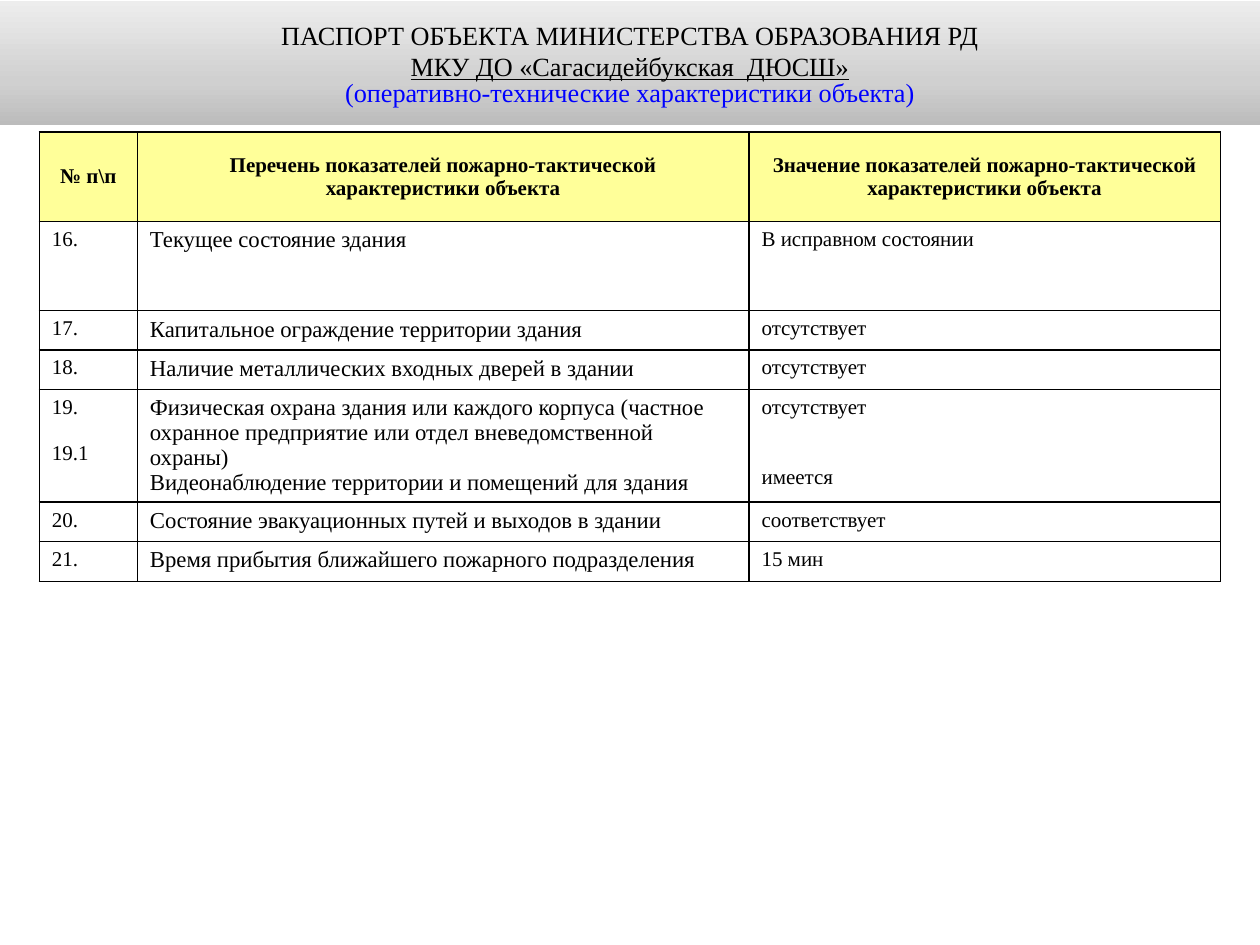
"""Build a slide with a table of fire-safety characteristics of a building."""
from copy import deepcopy

from lxml.etree import SubElement
from pptx import Presentation
from pptx.dml.color import RGBColor
from pptx.enum.text import MSO_ANCHOR as Anchor, MSO_AUTO_SIZE as AutoSize, PP_ALIGN as Align
from pptx.oxml.ns import qn
from pptx.util import Pt

COLORS = {
    "black": "000000", "white": "FFFFFF", "blue": "0000FF", "header": "FFFF99",
    "dark": "BCBCBC", "mid": "D0D0D0", "light": "EDEDED",
}
FONT = "Times New Roman"
TITLE = [
    "ПАСПОРТ ОБЪЕКТА МИНИСТЕРСТВА ОБРАЗОВАНИЯ РД",
    "МКУ ДО «Сагасидейбукская  ДЮСШ»",
    "(оперативно-технические характеристики объекта)",
]
HEADER = [
    "№ п\\п",
    "Перечень показателей пожарно-тактической характеристики объекта",
    "Значение показателей пожарно-тактической характеристики объекта",
]
ROWS = [
    ["16.", "Текущее состояние здания", "В исправном состоянии"],
    ["17.", "Капитальное ограждение территории здания", "отсутствует"],
    ["18.", "Наличие металлических входных дверей в здании", "отсутствует"],
    ["19.\n19.1",
     "Физическая охрана здания или каждого корпуса (частное охранное предприятие "
     "или отдел вневедомственной охраны)\n"
     "Видеонаблюдение территории и помещений для здания",
     "отсутствует\nимеется"],
    ["20.", "Состояние эвакуационных путей и выходов в здании", "соответствует"],
    ["21.", "Время прибытия ближайшего пожарного подразделения", "15 мин"],
]
COL_WIDTHS = [56, 349.5, 269.5]
ROW_HEIGHTS = [51, 51, 22.5, 22.5, 64.5, 22.5, 23]
BODY_SIZES = [12, 13, 12]
SECOND_LINE_GAPS = [13.3, 0, 26.7]


def rgb(name):
    return RGBColor.from_string(COLORS[name])


def format_runs(p, size, color="black", bold=False, underline=False):
    for r in p.runs:
        r.font.name = FONT
        r.font.size = Pt(size)
        r.font.bold = bold
        r.font.underline = underline
        r.font.color.rgb = rgb(color)


def fill_gradient(sp, stops, angle):
    sp.fill.gradient()
    sp.fill.gradient_angle = angle
    gs_list = sp._element.spPr.find(qn("a:gradFill")).find(qn("a:gsLst"))
    while len(gs_list) < len(stops):
        gs_list.append(deepcopy(gs_list[0]))
    for stop, (position, color) in zip(sp.fill.gradient_stops, stops):
        stop.position = position
        stop.color.rgb = rgb(color)


def add_title(s):
    sp = s.shapes.title
    sp.left, sp.top, sp.width, sp.height = Pt(0), Pt(0.5), Pt(720), Pt(71)
    fill_gradient(sp, [(0, "dark"), (0.35, "mid"), (1, "light")], 90)
    tf = sp.text_frame
    tf.text = "\n".join(TITLE)
    tf.word_wrap = True
    tf.auto_size = AutoSize.NONE
    tf.vertical_anchor = Anchor.MIDDLE
    for p, color, underline in zip(tf.paragraphs, ["black", "black", "blue"],
                                   [False, True, False]):
        p.alignment = Align.CENTER
        format_runs(p, 15, color, underline=underline)
    tf.paragraphs[-1].line_spacing = 0.8


def add_borders(cell):
    tc_pr = cell._tc.get_or_add_tcPr()
    for i, side in enumerate(["lnL", "lnR", "lnT", "lnB"]):
        ln = tc_pr.makeelement(qn(f"a:{side}"), {"w": str(Pt(1))})
        fill = SubElement(ln, qn("a:solidFill"))
        SubElement(fill, qn("a:srgbClr"), val=COLORS["black"])
        tc_pr.insert(i, ln)


def format_cell(cell, text, size, is_header, gap):
    cell.text = text
    cell.fill.solid()
    cell.fill.fore_color.rgb = rgb("header" if is_header else "white")
    cell.vertical_anchor = Anchor.MIDDLE if is_header else Anchor.TOP
    for i, p in enumerate(cell.text_frame.paragraphs):
        p.alignment = Align.CENTER if is_header else Align.LEFT
        p.space_before = Pt(gap if i else 0)
        format_runs(p, size, bold=is_header)
    add_borders(cell)


def add_table(s):
    frame = s.shapes.add_table(len(ROW_HEIGHTS), len(COL_WIDTHS), Pt(22.5), Pt(75.5),
                               Pt(sum(COL_WIDTHS)), Pt(sum(ROW_HEIGHTS)))
    table = frame.table
    table.first_row = table.horz_banding = False
    for col, width in zip(table.columns, COL_WIDTHS):
        col.width = Pt(width)
    for row, height in zip(table.rows, ROW_HEIGHTS):
        row.height = Pt(height)
    for i, texts in enumerate([HEADER, *ROWS]):
        for j, text in enumerate(texts):
            size = BODY_SIZES[j] if i else 12
            format_cell(table.cell(i, j), text, size, i == 0, SECOND_LINE_GAPS[j])


def main():
    prs = Presentation()
    prs.slide_width, prs.slide_height = Pt(720), Pt(540)
    s = prs.slides.add_slide(prs.slide_layouts[5])
    add_title(s)
    add_table(s)
    prs.save("out.pptx")


if __name__ == "__main__":
    main()
